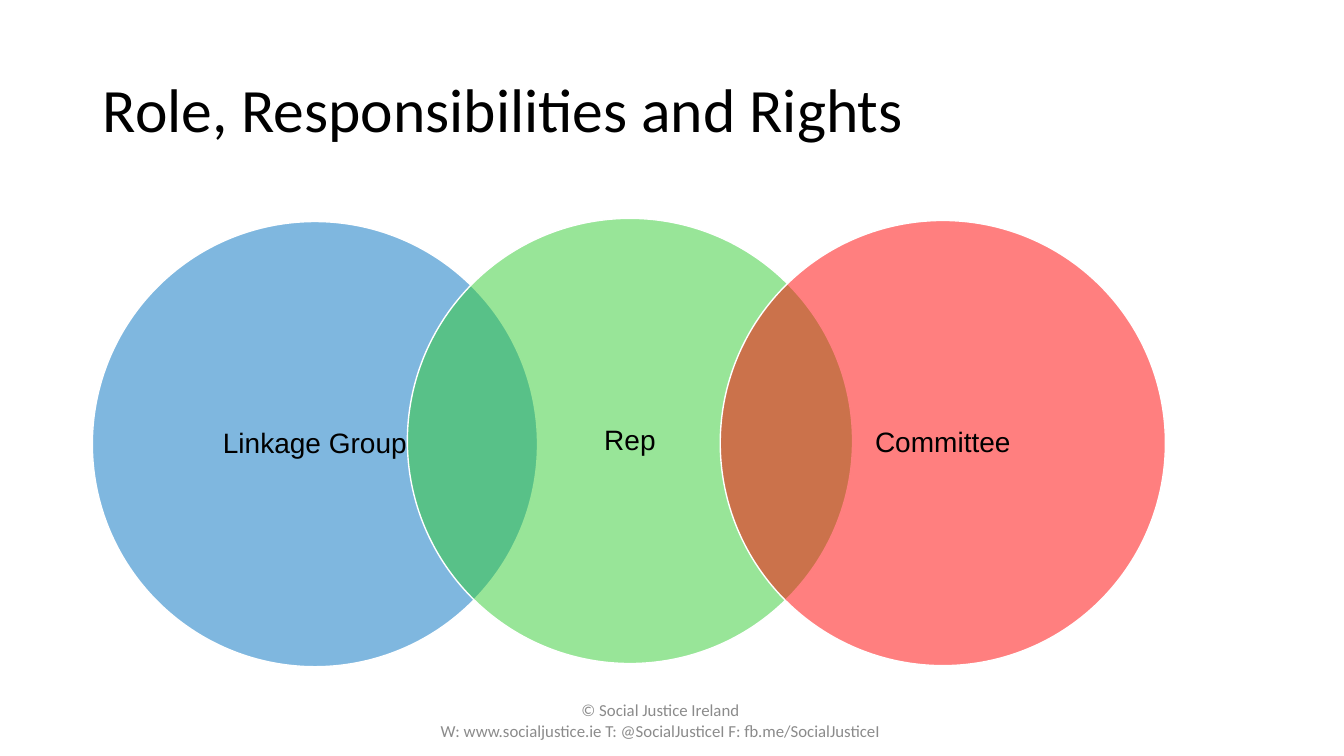
"""Builds a slide with three overlapping circles linking a group, its rep and a committee."""
from lxml import etree
from pptx import Presentation
from pptx.dml.color import RGBColor
from pptx.enum.shapes import MSO_SHAPE
from pptx.enum.text import MSO_ANCHOR, PP_ALIGN
from pptx.oxml.ns import qn
from pptx.util import Emu, Pt

OVAL = MSO_SHAPE.OVAL
MIDDLE = MSO_ANCHOR.MIDDLE
LEFT, CENTER = PP_ALIGN.LEFT, PP_ALIGN.CENTER

EMU_PER_PX = 9525
DIAMETER = 424
COLORS = {
    "text": "000000",
    "footer": "8B8B8B",
    "outline": "FFFFFF",
    "group": "0070C0",
    "rep": "33CC33",
    "committee": "FF0000",
}
CIRCLES = [
    ("Linkage Group", "group", 88, 211),
    ("Rep", "rep", 388, 208),
    ("Committee", "committee", 686, 210),
]
FOOTER = [
    "© Social Justice Ireland",
    "W: www.socialjustice.ie T: @SocialJusticeI F: fb.me/SocialJusticeI",
]


def px(length):
    return Emu(length * EMU_PER_PX)


def color(key):
    return RGBColor.from_string(COLORS[key])


def write(frame, lines, *, size, font="Calibri", fill="text", align=CENTER,
          spacing=1.0, inset=(10, 5)):
    frame.word_wrap = True
    frame.vertical_anchor = MIDDLE
    frame.margin_left = frame.margin_right = px(inset[0])
    frame.margin_top = frame.margin_bottom = px(inset[1])
    for index, line in enumerate(lines):
        paragraph = frame.paragraphs[0] if index == 0 else frame.add_paragraph()
        paragraph.alignment = align
        paragraph.line_spacing = spacing
        run = paragraph.add_run()
        run.text = line
        run.font.size = Pt(size)
        run.font.name = font
        run.font.color.rgb = color(fill)


def add_title(slide, text):
    title = slide.shapes.title
    title.left, title.top, title.width, title.height = map(px, (88, 38, 1104, 139))
    write(title.text_frame, [text], size=44, align=LEFT, spacing=0.9)


def add_footer(slide, lines):
    footer = slide.shapes.add_textbox(*map(px, (403, 667, 452, 38)))
    write(footer.text_frame, lines, size=12, fill="footer")


def add_circle(slide, label, fill, left, top):
    circle = slide.shapes.add_shape(OVAL, *map(px, (left, top, DIAMETER, DIAMETER)))
    circle.shadow.inherit = False
    circle.fill.solid()
    circle.fill.fore_color.rgb = color(fill)
    solid = circle.fill._xPr.find(qn("a:solidFill"))
    etree.SubElement(solid[0], qn("a:alpha"), val="50000")
    circle.line.color.rgb = color("outline")
    circle.line.width = Pt(1)
    write(circle.text_frame, [label], size=20, font="Arial", spacing=0.9, inset=(23, 3))


def main():
    deck = Presentation()
    deck.slide_width, deck.slide_height = px(1280), px(720)
    slide = deck.slides.add_slide(deck.slide_layouts[5])
    add_title(slide, "Role, Responsibilities and Rights")
    add_footer(slide, FOOTER)
    for circle in CIRCLES:
        add_circle(slide, *circle)
    deck.save("out.pptx")


if __name__ == "__main__":
    main()
